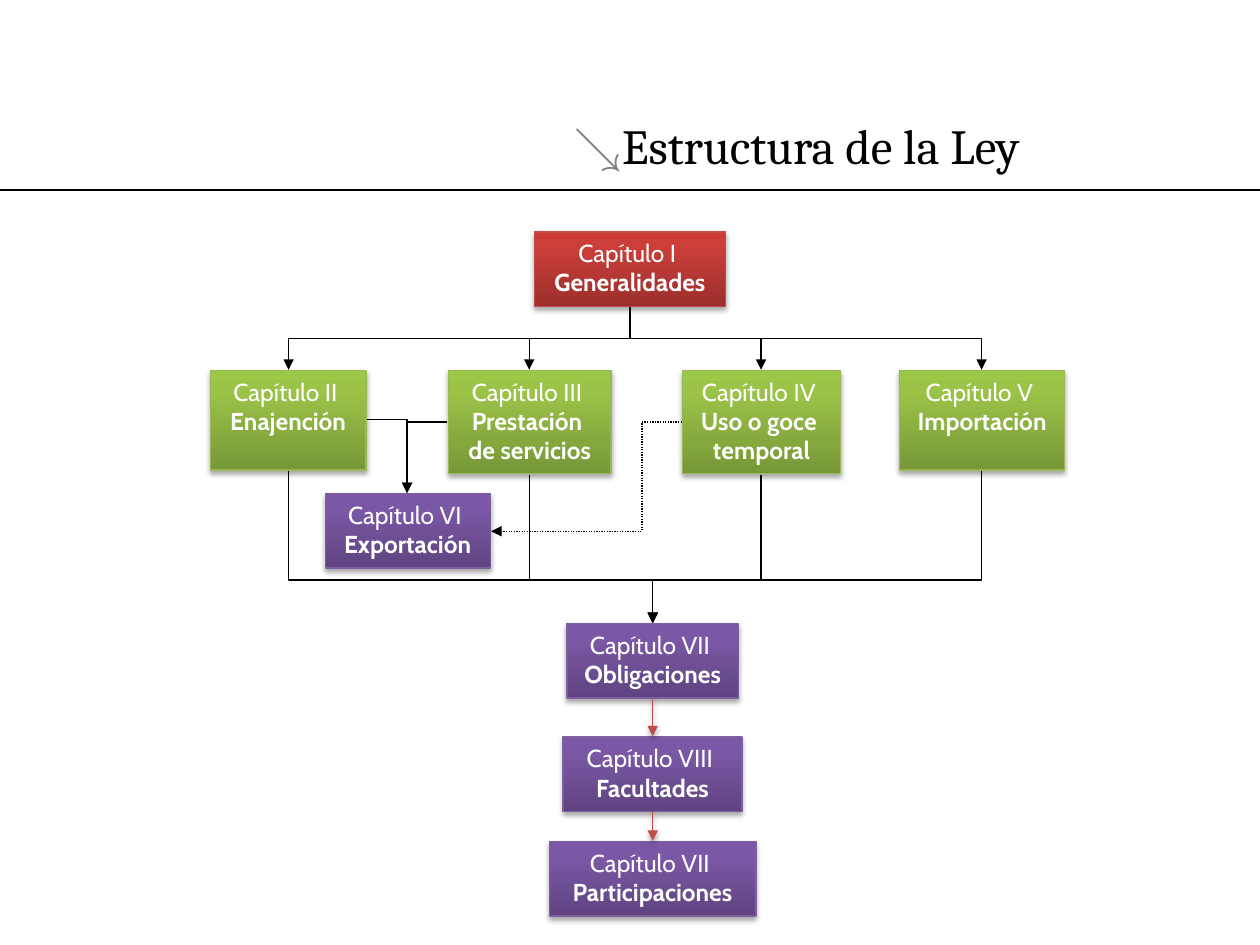
from pptx import Presentation
from pptx.dml.color import RGBColor
from pptx.enum.dml import MSO_LINE
from pptx.enum.shapes import MSO_CONNECTOR, MSO_SHAPE
from pptx.enum.text import MSO_ANCHOR, MSO_AUTO_SIZE, PP_ALIGN
from pptx.oxml import parse_xml
from pptx.oxml.ns import nsdecls, qn
from pptx.util import Pt

COLORS = {"black": "000000", "gray": "808080", "white": "FFFFFF", "arrow": "BF4C48"}
# Box styles: gradient stops from bottom to top, then the outline
STYLES = {
    "red": ("9C2F2D", "CB3E3A", "CE3B37", "BF4C48"),
    "green": ("779737", "9BC348", "9DC746", "98B955"),
    "purple": ("5F4480", "7B58A6", "7C57A8", "7D60A0"),
}
NO_EFFECT = f"<a:effectLst {nsdecls('a')}/>"
SHADOW = (
    f'<a:effectLst {nsdecls("a")}><a:outerShdw blurRad="{Pt(3.1)}" dist="{Pt(1.8)}" '
    'dir="5400000" rotWithShape="0"><a:srgbClr val="000000"><a:alpha val="35000"/>'
    "</a:srgbClr></a:outerShdw></a:effectLst>"
)


def add_text(para, text, font="Cabin", size=14, color="white", bold=False):
    span = para.add_run()
    span.text = text
    span.font.name = font
    span.font.size = Pt(size)
    span.font.bold = bold
    span.font.color.rgb = RGBColor.from_string(COLORS[color])


def add_line(start, end, shape="line", vertical=False, bend=0.5, color="black",
             dash=None, head=True, shadow=False):
    """Draw a line; a vertical elbow leaves its start downwards."""
    (x1, y1), (x2, y2) = start, end
    rotation = 0
    if vertical:
        # Turn a sideways elbow by a quarter about the middle of its box
        rotation = 90 if x2 < x1 else 270
        middle_x, middle_y = (x1 + x2) / 2, (y1 + y2) / 2
        half_width, half_height = (y2 - y1) / 2, abs(x2 - x1) / 2
        if rotation == 270:
            half_width = -half_width
        x1, x2 = middle_x - half_width, middle_x + half_width
        y1, y2 = middle_y - half_height, middle_y + half_height
    kind = MSO_CONNECTOR.STRAIGHT if shape == "line" else MSO_CONNECTOR.ELBOW
    line = slide.shapes.add_connector(kind, Pt(x1), Pt(y1), Pt(x2), Pt(y2))
    line.line.color.rgb = RGBColor.from_string(COLORS[color])
    line.line.width = Pt(0.75)
    if dash:
        line.line.dash_style = dash
    properties = line._element.spPr
    if rotation:
        properties.find(qn("a:xfrm")).set("rot", str(rotation * 60000))
    geometry = properties.find(qn("a:prstGeom"))
    geometry.set("prst", shape)
    if shape == "bentConnector3":
        guides = geometry.find(qn("a:avLst"))
        guides.append(parse_xml(
            f'<a:gd {nsdecls("a")} name="adj1" fmla="val {round(bend * 100000)}"/>'))
    if head:
        properties.find(qn("a:ln")).append(
            parse_xml(f'<a:tailEnd {nsdecls("a")} type="triangle"/>'))
    properties.append(parse_xml(SHADOW if shadow else NO_EFFECT))


deck = Presentation()
deck.slide_width, deck.slide_height = Pt(720), Pt(540)
slide = deck.slides.add_slide(deck.slide_layouts[5])

# Rule and title
add_line((0, 108.6), (720, 108.6), head=False)
title = slide.shapes.title
title.left, title.top, title.width, title.height = Pt(320.4), Pt(21.6), Pt(363.6), Pt(90)
frame = title.text_frame
frame.vertical_anchor = MSO_ANCHOR.BOTTOM
frame.margin_bottom = Pt(12)
para = frame.paragraphs[0]
para.alignment = PP_ALIGN.LEFT
add_text(para, "↘", font="Arial", size=28, color="gray")
add_text(para, "Estructura de la Ley", font="Cambria", size=28, color="black")

# Chapter boxes: style, left, top, width, height, chapter, name lines
ROW = 211.7
LOW, MID, TALL = 42.5, 56.9, 59
boxes = [
    ("red", 305.3, 132.5, 109.4, LOW, "I", ["Generalidades"]),
    ("green", 120.2, ROW, 89, MID, "II", ["Enajención"]),
    ("green", 256.3, ROW, 92.9, TALL, "III", ["Prestación ", "de servicios"]),
    ("green", 390.2, ROW, 90, TALL, "IV", ["Uso o goce ", "temporal"]),
    ("green", 514.1, ROW, 94.3, MID, "V", ["Importación"]),
    ("purple", 185.8, 282.2, 94.3, LOW, "VI", ["Exportación"]),
    ("purple", 324, 356.4, 98, LOW, "VII", ["Obligaciones"]),
    ("purple", 321.8, 421.2, 102.2, LOW, "VIII", ["Facultades"]),
    ("purple", 313.9, 481, 118.1, LOW, "VII", ["Participaciones"]),
]
for style, left, top, width, height, chapter, names in boxes:
    box = slide.shapes.add_shape(
        MSO_SHAPE.RECTANGLE, Pt(left), Pt(top), Pt(width), Pt(height))
    bottom_color, upper_color, top_color, outline = STYLES[style]
    box.line.color.rgb = RGBColor.from_string(outline)
    box.line.width = Pt(0.75)
    stops = "".join(
        f'<a:gs pos="{position}"><a:srgbClr val="{color}"/></a:gs>'
        for position, color in ((0, bottom_color), (80000, upper_color), (100000, top_color)))
    box._element.spPr.find(qn("a:prstGeom")).addnext(parse_xml(
        f'<a:gradFill {nsdecls("a")} rotWithShape="1"><a:gsLst>{stops}</a:gsLst>'
        '<a:lin ang="16200000" scaled="0"/></a:gradFill>'))
    box._element.spPr.append(parse_xml(SHADOW))
    frame = box.text_frame
    frame.word_wrap = False
    frame.auto_size = MSO_AUTO_SIZE.NONE
    frame.vertical_anchor = MSO_ANCHOR.TOP
    for index, text in enumerate([f"Capítulo {chapter} ", *names]):
        para = frame.add_paragraph() if index else frame.paragraphs[0]
        para.alignment = PP_ALIGN.CENTER
        add_text(para, text, bold=index > 0)

# Chapter I to the green row, and the green row to Chapter VII
TRUNK, BUS = 373, 331.4
for center, bottom in ((164.9, 269), (302.4, 271.2), (434.9, 271.2), (560.9, 269)):
    add_line((360, 175.2), (center, 211.3), "bentConnector3", vertical=True)
    add_line((center, bottom), (TRUNK, 356), "bentConnector3", vertical=True,
             bend=(BUS - bottom) / (356 - bottom))

# Chapters II, III and IV to Chapter VI
add_line((209.5, 239.8), (232.6, 281.7), "bentConnector2")
add_line((255.6, 241.2), (232.6, 281.7), "bentConnector2")
add_line((389.7, 241.2), (280.7, 303.6), "bentConnector3", bend=0.21,
         dash=MSO_LINE.ROUND_DOT)

# Chapter VII down to the last box
for top, bottom in ((399.4, 420.7), (463.9, 480.5)):
    add_line((TRUNK, top), (TRUNK, bottom), color="arrow", shadow=True)

deck.save("out.pptx")
